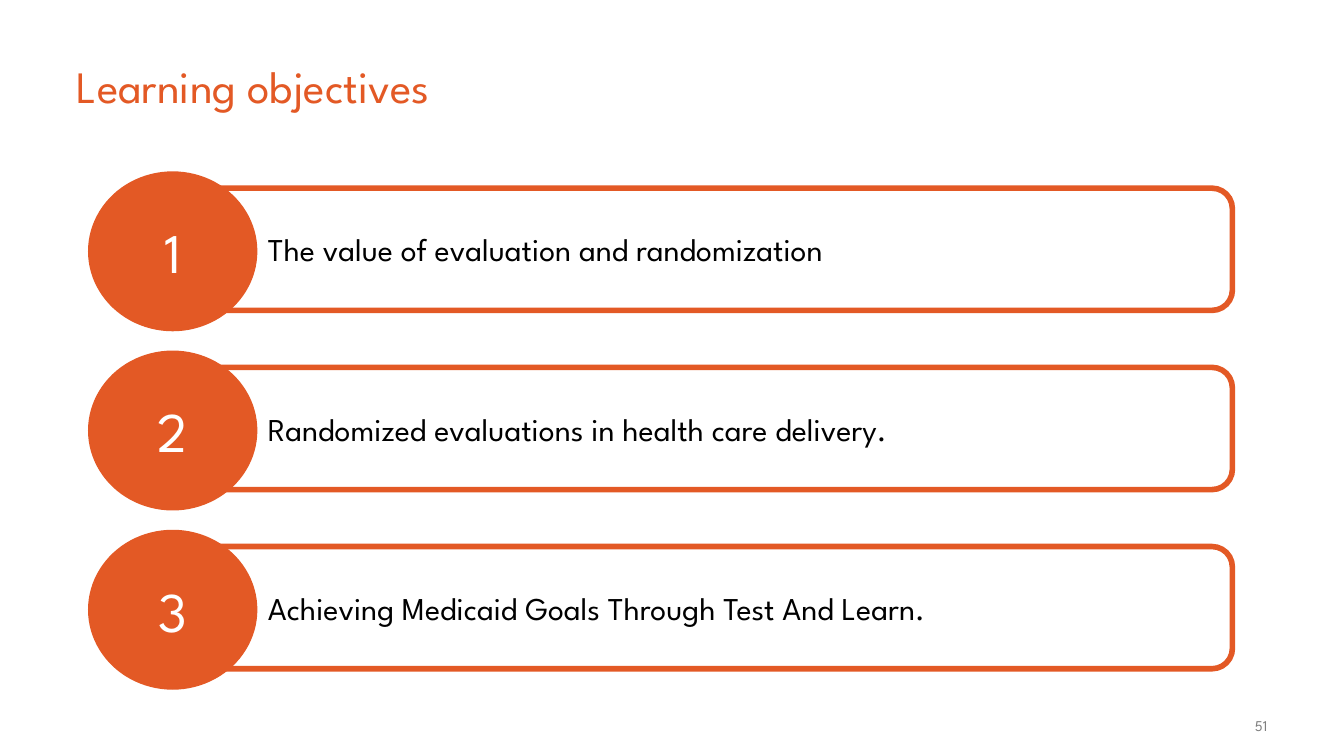
"""Build the learning objectives slide with three numbered banners."""
from dataclasses import dataclass

from pptx import Presentation
from pptx import util as u
from pptx.dml.color import RGBColor
from pptx.enum import shapes, text


@dataclass(frozen=True)
class Theme:
    """Colours, font and type sizes of the slide."""
    font: str = "League Spartan"
    accent: str = "E35925"
    white: str = "FFFFFF"
    black: str = "000000"
    grey: str = "7F7F7F"
    title: float = 24
    number: float = 30
    objective: float = 17
    footer: float = 8


@dataclass(frozen=True)
class Box:
    """Position and size in inches."""
    left: float
    top: float
    width: float
    height: float

    def lengths(self) -> tuple:
        """Return the four values as lengths."""
        return tuple(u.Inches(v) for v in (self.left, self.top, self.width, self.height))


@dataclass(frozen=True)
class Objective:
    """One numbered learning objective."""
    number: int
    wording: str


THEME = Theme()
OBJECTIVES = (
    Objective(1, "The value of evaluation and randomization"),
    Objective(2, "Randomized evaluations in health care delivery."),
    Objective(3, "Achieving Medicaid Goals Through Test And Learn."),
)
ROW_PITCH = 4 / 3
CIRCLE_TOP = 1.28
BANNER_TOP = 1.4


def write(shape, wording: str, size: float, color: str, align, margins: tuple,
          anchor=text.MSO_ANCHOR.MIDDLE) -> None:
    """Fill a shape with one formatted paragraph."""
    frame = shape.text_frame
    sides = ("margin_left", "margin_top", "margin_right", "margin_bottom")
    settings = {"word_wrap": True, "auto_size": text.MSO_AUTO_SIZE.NONE,
                "vertical_anchor": anchor}
    settings.update(zip(sides, map(u.Inches, margins)))
    for name, value in settings.items():
        setattr(frame, name, value)
    paragraph = frame.paragraphs[0]
    paragraph.alignment = align
    run = paragraph.add_run()
    run.text = wording
    for name, value in {"name": THEME.font, "size": u.Pt(size)}.items():
        setattr(run.font, name, value)
    run.font.color.rgb = RGBColor.from_string(color)


def add_panel(slide, kind, box: Box, fill: str, line_width: float):
    """Add a flat preset shape with an accent outline."""
    shape = slide.shapes.add_shape(kind, *box.lengths())
    shape.shadow.inherit = False
    shape.fill.solid()
    shape.fill.fore_color.rgb = RGBColor.from_string(fill)
    shape.line.color.rgb = RGBColor.from_string(THEME.accent)
    shape.line.width = u.Pt(line_width)
    return shape


def add_objective(slide, objective: Objective) -> None:
    """Draw the banner of an objective and its numbered circle."""
    offset = (objective.number - 1) * ROW_PITCH
    banner = add_panel(slide, shapes.MSO_SHAPE.ROUNDED_RECTANGLE,
                       Box(1.47, BANNER_TOP + offset, 7.7, 0.91), THEME.white, 3)
    write(banner, objective.wording, THEME.objective, THEME.black,
          text.PP_ALIGN.LEFT, (0.48, 0.1, 0.1, 0.1))
    circle = add_panel(slide, shapes.MSO_SHAPE.OVAL,
                       Box(0.66, CIRCLE_TOP + offset, 1.25, 1.18), THEME.accent, 0.75)
    write(circle, str(objective.number), THEME.number, THEME.white,
          text.PP_ALIGN.CENTER, (0.1, 0.1, 0.1, 0.1))


def main() -> None:
    """Create and save the presentation."""
    presentation = Presentation()
    presentation.slide_width = u.Inches(10)
    presentation.slide_height = presentation.slide_width * 9 // 16
    slide = presentation.slides.add_slide(presentation.slide_layouts[5])
    margins = (0.07, 0.04, 0.07, 0.04)

    title = slide.shapes.title
    sides = ("left", "top", "width", "height")
    for name, value in zip(sides, Box(0.5, 0.16, 9, 0.95).lengths()):
        setattr(title, name, value)
    write(title, "Learning objectives", THEME.title, THEME.accent,
          text.PP_ALIGN.LEFT, margins)

    page_number = slide.shapes.add_textbox(*Box(8.57, 5.29, 0.93, 0.18).lengths())
    write(page_number, "51", THEME.footer, THEME.grey, text.PP_ALIGN.RIGHT,
          margins, text.MSO_ANCHOR.TOP)

    for objective in OBJECTIVES:
        add_objective(slide, objective)
    presentation.save("out.pptx")


if __name__ == "__main__":
    main()
